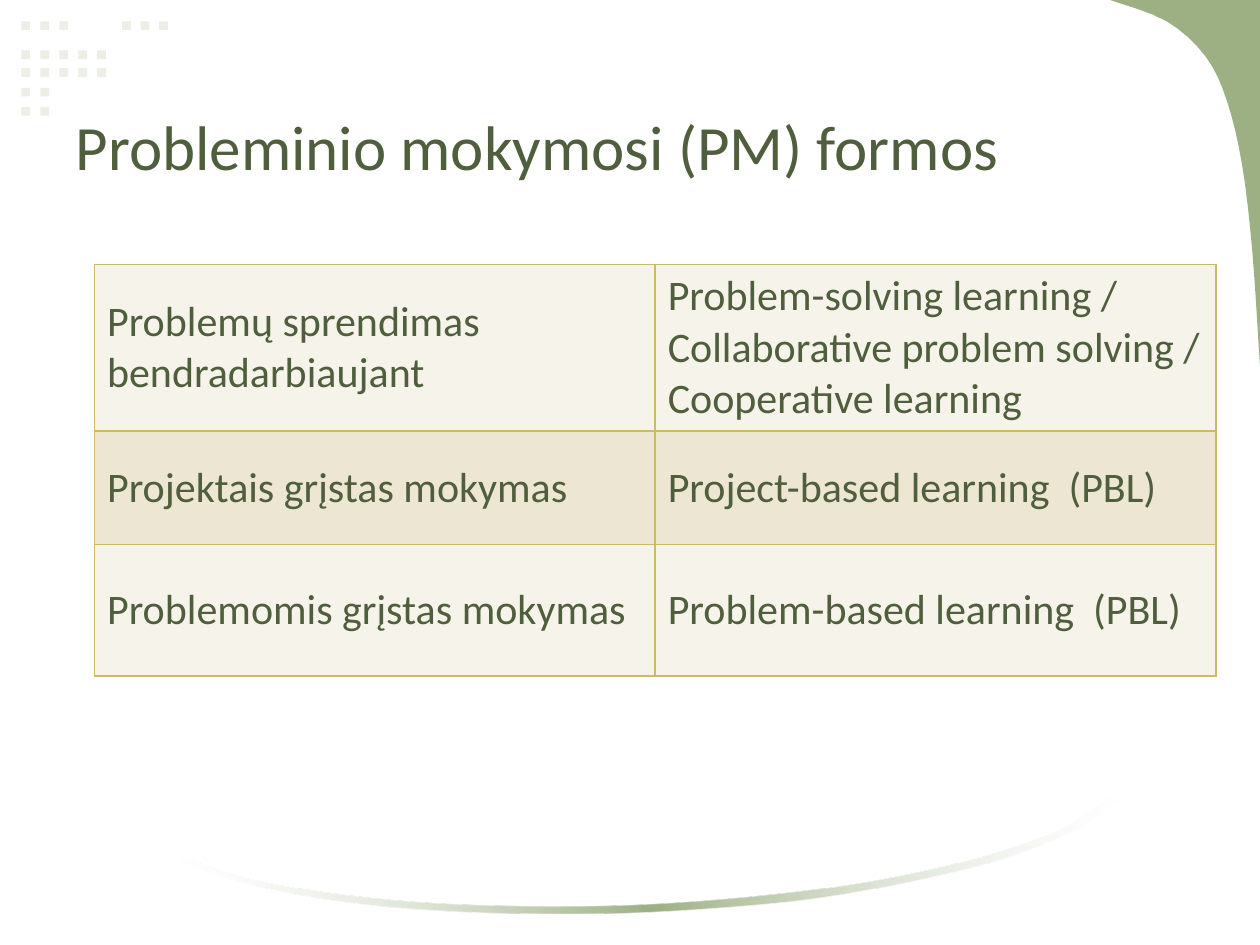
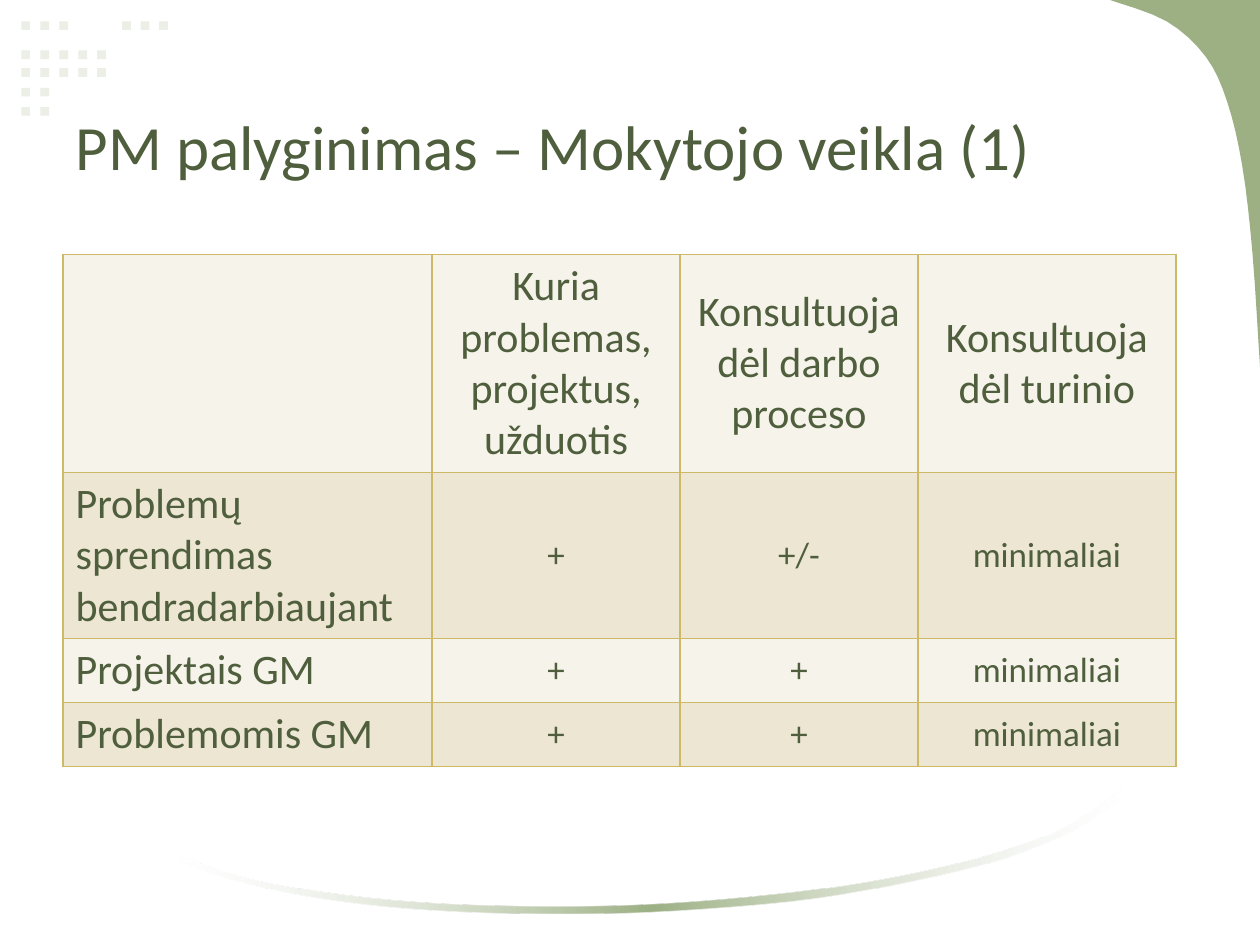
from lxml.etree import SubElement
from pptx import Presentation
from pptx.dml.color import RGBColor
from pptx.enum.shapes import MSO_SHAPE
from pptx.enum.text import MSO_ANCHOR, MSO_AUTO_SIZE, PP_ALIGN
from pptx.oxml.ns import qn
from pptx.util import Pt

FONT = "Calibri"
DARK_GREEN = RGBColor(0x4F, 0x5E, 0x3C)
GREEN = RGBColor(0x9C, 0xB0, 0x84)
PALE_GREEN = RGBColor(0xEB, 0xEF, 0xE6)
GOLD = RGBColor(0xCE, 0xB9, 0x66)
WHITE = RGBColor(0xFF, 0xFF, 0xFF)
ROW_FILLS = (RGBColor(0xF6, 0xF3, 0xEA), RGBColor(0xED, 0xE6, 0xD3))

DOT = 5
DOT_COLUMNS = (12.2, 23.1, 34, 44.8, 55.6, 69.8, 80.4, 91)
DOT_ROWS = {12.2: (0, 1, 2, 5, 6, 7), 28.8: range(5), 39: range(5),
            50.2: range(2), 61.2: range(2)}

CORNER_EDGE = [(634.3, 0), (666.7, 12.2), (689, 32.4), (701.3, 58.3),
               (709.9, 95), (715.7, 144.7), (720, 209.5)]
SWOOSH_BOTTOM = [(642.2, 455), (613.4, 474.5), (572.4, 491), (522, 503.3),
                 (465.1, 513.4), (403.2, 519.1), (339.8, 522), (277.2, 521.3),
                 (218.9, 517.7), (167, 510.5), (123.8, 499.7), (102.2, 491)]
SWOOSH_TOP = [(102.2, 488.9), (138.2, 501.1), (185, 509.8), (239.8, 515.5),
              (300.2, 517.7), (363.6, 517), (427, 512.6), (486.7, 505.4),
              (542.2, 494.6), (589, 481), (614.9, 469.4), (642.2, 450)]


def write(frame, text, size=24, align=PP_ALIGN.LEFT, color=DARK_GREEN):
    """Fill a text frame, one paragraph for each line of text."""
    frame.text = text
    for paragraph in frame.paragraphs:
        paragraph.alignment = align
        paragraph.font.size = Pt(size)
        for run in paragraph.runs:
            run.font.name = FONT
            run.font.size = Pt(size)
            run.font.bold = False
            run.font.color.rgb = color


def smooth(knots, steps=4):
    """Sample a Catmull-Rom curve that passes through the knots."""
    padded = [knots[0], *knots, knots[-1]]
    points = []
    for a, b, c, d in zip(padded, padded[1:], padded[2:], padded[3:]):
        for step in range(steps):
            t = step / steps
            points.append(tuple(
                q + t / 2 * (r - p + t * (2 * p - 5 * q + 4 * r - s
                                          + t * (3 * q - p - 3 * r + s)))
                for p, q, r, s in zip(a, b, c, d)))
    return points + [knots[-1]]


def paint(shape, color):
    shape.shadow.inherit = False
    shape.line.fill.background()
    shape.fill.solid()
    shape.fill.fore_color.rgb = color


def add_outline(slide, points, color):
    start, *rest = [(Pt(x), Pt(y)) for x, y in points]
    builder = slide.shapes.build_freeform(*start, scale=1.0)
    builder.add_line_segments(rest, close=True)
    outline = builder.convert_to_shape()
    paint(outline, color)
    return outline


def fade_ends(shape, color):
    """Give the shape a horizontal gradient that fades out at both ends."""
    shape.fill.gradient()
    shape.fill.gradient_angle = 0
    stops = shape.element.spPr.find(qn("a:gradFill")).find(qn("a:gsLst"))
    for stop in list(stops):
        stops.remove(stop)
    for percent, tone, opacity in ((0, WHITE, 30), (50, color, 100), (100, WHITE, 30)):
        stop = SubElement(stops, qn("a:gs"), pos=str(percent * 1000))
        stop_color = SubElement(stop, qn("a:srgbClr"), val=str(tone))
        if opacity < 100:
            SubElement(stop_color, qn("a:alpha"), val=str(opacity * 1000))


def decorate(slide):
    for top, columns in DOT_ROWS.items():
        for column in columns:
            dot = slide.shapes.add_shape(
                MSO_SHAPE.RECTANGLE, Pt(DOT_COLUMNS[column]), Pt(top), Pt(DOT), Pt(DOT))
            paint(dot, PALE_GREEN)
    add_outline(slide, [(720, 0)] + smooth(CORNER_EDGE), GREEN)
    swoosh = add_outline(slide, smooth(SWOOSH_BOTTOM) + smooth(SWOOSH_TOP), GREEN)
    fade_ends(swoosh, GREEN)


def add_titled_slide(deck, heading, width):
    slide = deck.slides.add_slide(deck.slide_layouts[5])
    decorate(slide)
    title = slide.shapes.title
    title.left, title.top, title.width, title.height = Pt(36), Pt(21.6), Pt(width), Pt(90)
    frame = title.text_frame
    frame.auto_size = MSO_AUTO_SIZE.NONE
    frame.word_wrap = True
    frame.vertical_anchor = MSO_ANCHOR.BOTTOM
    frame.margin_left = frame.margin_right = Pt(7.2)
    frame.margin_top = frame.margin_bottom = Pt(7.2)
    write(frame, heading, size=36)
    return slide


def add_borders(cell, color):
    properties = cell._tc.get_or_add_tcPr()
    for position, side in enumerate(("a:lnL", "a:lnR", "a:lnT", "a:lnB")):
        border = SubElement(properties, qn(side), w=str(Pt(1)))
        properties.insert(position, border)
        fill = SubElement(border, qn("a:solidFill"))
        SubElement(fill, qn("a:srgbClr"), val=str(color))


def add_grid(slide, left, top, widths, heights, rows, cell_format):
    """Draw a banded table; cell_format(row, column) gives the text format."""
    table = slide.shapes.add_table(
        len(rows), len(widths), Pt(left), Pt(top), Pt(sum(widths)), Pt(sum(heights))).table
    table.first_row = table.horz_banding = False
    for column, width in zip(table.columns, widths):
        column.width = Pt(width)
    for r, (texts, height) in enumerate(zip(rows, heights)):
        table.rows[r].height = Pt(height)
        for c, text in enumerate(texts):
            cell = table.cell(r, c)
            cell.vertical_anchor = MSO_ANCHOR.MIDDLE
            cell.fill.solid()
            cell.fill.fore_color.rgb = ROW_FILLS[r % 2]
            add_borders(cell, GOLD)
            write(cell.text_frame, text, **cell_format(r, c))


def comparison_format(row, column):
    if column == 0:
        return {}
    return {"size": 20 if row else 24, "align": PP_ALIGN.CENTER}


def main():
    deck = Presentation()
    deck.slide_width, deck.slide_height = Pt(720), Pt(540)

    forms = add_titled_slide(deck, "Probleminio mokymosi (PM) formos", 648)
    add_grid(forms, 54, 151.2, (320.4, 320.4), (95, 65, 75), [
        ("Problemų sprendimas bendradarbiaujant",
         "Problem-solving learning /\nCollaborative problem solving / Cooperative learning"),
        ("Projektais grįstas mokymas", "Project-based learning  (PBL)"),
        ("Problemomis grįstas mokymas", "Problem-based learning  (PBL)"),
    ], lambda row, column: {})

    comparison = add_titled_slide(deck, "PM palyginimas – Mokytojo veikla (1)", 673.2)
    add_grid(comparison, 36, 145.4, (211, 141.6, 136, 147.4), (124.5, 95, 36.5, 36.5), [
        ("", "Kuria problemas, projektus, užduotis", "Konsultuoja dėl darbo proceso",
         "Konsultuoja dėl turinio"),
        ("Problemų sprendimas bendradarbiaujant", "+", "+/-", "minimaliai"),
        ("Projektais GM", "+", "+", "minimaliai"),
        ("Problemomis GM", "+", "+", "minimaliai"),
    ], comparison_format)

    deck.save("out.pptx")


if __name__ == "__main__":
    main()
